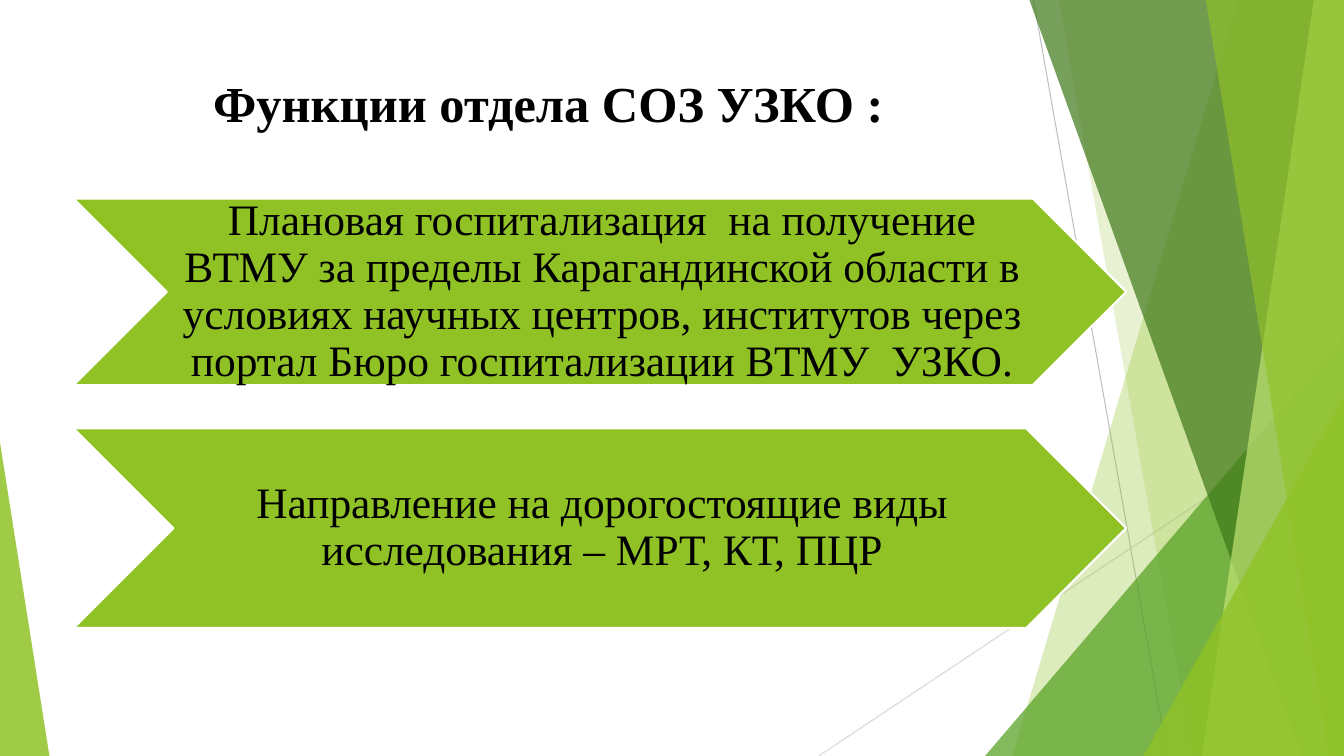
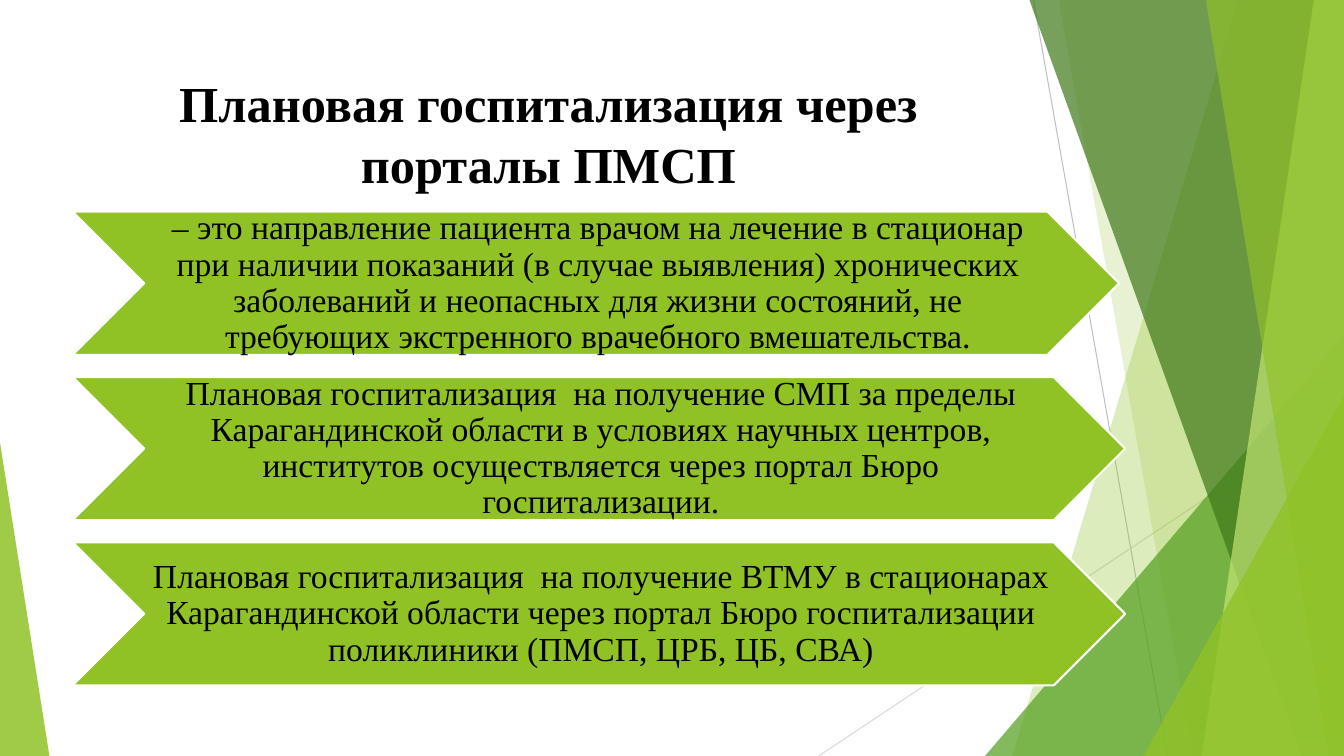
"""Build two slides on planned hospitalisation with a shared faceted green backdrop."""
import pptx
import pptx.dml.color
import pptx.enum.shapes
import pptx.enum.text
import pptx.oxml
import pptx.oxml.ns
import pptx.util

Inches = pptx.util.Inches
Pt = pptx.util.Pt
qn = pptx.oxml.ns.qn
SHAPE = pptx.enum.shapes.MSO_SHAPE
ANCHOR = pptx.enum.text.MSO_ANCHOR
CENTER = pptx.enum.text.PP_ALIGN.CENTER

WIDTH, HEIGHT = 13.33, 7.5
FONT = "Times New Roman"
COLORS = {
    "text": "000000",
    "outline": "FFFFFF",
    "lime": "90C226",
    "green": "54A021",
    "forest": "3F7819",
    "pale": "C0E474",
    "steep line": "BFBFBF",
    "flat line": "D9D9D9",
}

SLIDES = [
    {
        "title": "Функции отдела СОЗ УЗКО :",
        "size": 31,
        "left": 0.73,
        "arrows": [
            (1.97, 10.44, 1.85,
             "Плановая госпитализация  на получение ВТМУ за пределы Карагандинской области "
             "в условиях научных центров, институтов через портал Бюро госпитализации "
             "ВТМУ  УЗКО."),
            (4.25, 10.44, 1.98,
             "Направление на дорогостоящие виды исследования – МРТ, КТ, ПЦР"),
        ],
    },
    {
        "title": "Плановая госпитализация через порталы ПМСП",
        "size": 24,
        "left": 0.72,
        "arrows": [
            (2.1, 10.38, 1.42,
             "– это направление пациента врачом на лечение в стационар при наличии показаний "
             "(в случае выявления) хронических заболеваний и неопасных для жизни состояний, "
             "не требующих экстренного врачебного вмешательства."),
            (3.74, 10.44, 1.42,
             "Плановая госпитализация  на получение СМП за пределы Карагандинской области "
             "в условиях научных центров, институтов осуществляется через портал "
             "Бюро госпитализации."),
            (5.38, 10.44, 1.42,
             "Плановая госпитализация  на получение ВТМУ в стационарах Карагандинской области "
             "через портал Бюро госпитализации поликлиники (ПМСП, ЦРБ, ЦБ, СВА)"),
        ],
    },
]


def rgb(name):
    """Return the palette colour with the given name."""
    return pptx.dml.color.RGBColor.from_string(COLORS[name])


def tint(shape, color, opacity):
    """Give a shape a borderless fill of the given opacity in percent."""
    shape.shadow.inherit = False
    shape.line.fill.background()
    shape.fill.solid()
    shape.fill.fore_color.rgb = rgb(color)
    fill_color = next(shape.element.iter(qn("a:srgbClr")))
    alpha = pptx.oxml.parse_xml(
        f'<a:alpha {pptx.oxml.ns.nsdecls("a")} val="{opacity * 1000}"/>')
    fill_color.append(alpha)


def add_line(shapes, start, end, color):
    """Add a thin straight line."""
    points = [Inches(value) for value in (*start, *end)]
    line = shapes.add_connector(pptx.enum.shapes.MSO_CONNECTOR.STRAIGHT, *points)
    line.line.color.rgb = rgb(color)
    line.line.width = Pt(0.75)
    line.element.spPr.append(line.element.makeelement(qn("a:effectLst"), {}))


def add_facet(shapes, top_x, bottom_x, color, opacity):
    """Add a full-height facet between a slanted edge and the right slide edge."""
    builder = shapes.build_freeform(Inches(top_x), 0)
    corners = [(WIDTH, 0), (WIDTH, HEIGHT), (bottom_x, HEIGHT)]
    builder.add_line_segments([(Inches(x), Inches(y)) for x, y in corners])
    tint(builder.convert_to_shape(), color, opacity)


def add_corner(shapes, left, top, width, apex, color, opacity):
    """Add a right triangle that stands on the bottom slide edge."""
    triangle = shapes.add_shape(
        SHAPE.ISOSCELES_TRIANGLE,
        Inches(left), Inches(top), Inches(width), Inches(HEIGHT - top))
    triangle.adjustments[0] = apex
    tint(triangle, color, opacity)


def add_backdrop(slide):
    """Draw the backdrop and place it behind the placeholders of the layout."""
    backdrop = slide.shapes.add_group_shape()
    shapes = backdrop.shapes
    add_line(shapes, (10.25, 0), (11.58, HEIGHT), "steep line")
    add_line(shapes, (WIDTH, 4.03), (8.12, HEIGHT), "flat line")
    add_facet(shapes, 12.28, 10.04, "lime", 30)
    add_facet(shapes, 10.5, 11.83, "lime", 20)
    add_corner(shapes, 9.77, 3.33, 3.56, 1, "green", 72)
    add_facet(shapes, 10.21, 12.91, "forest", 70)
    add_facet(shapes, 13.03, 11.92, "pale", 70)
    add_facet(shapes, 11.96, 13.18, "lime", 65)
    add_corner(shapes, 11.34, 3.93, 1.99, 1, "lime", 80)
    add_corner(shapes, 0, 4.39, 0.49, 0, "lime", 85)
    for number, properties in enumerate(backdrop.element.iter(qn("p:cNvPr")), 100):
        properties.set("id", str(number))
    slide.slide_layout.shapes.element.insert(2, backdrop.element)


def place_title(layout):
    """Set the position of the title that the slides inherit."""
    title = layout.placeholders[0]
    title.left, title.top = Inches(0.74), Inches(0.67)
    title.width, title.height = Inches(9.4), Inches(1.44)


def write(shape, text, size, anchor, bold=False):
    """Write one centred paragraph into a shape."""
    frame = shape.text_frame
    frame.text = text
    frame.word_wrap = True
    frame.auto_size = pptx.enum.text.MSO_AUTO_SIZE.NONE
    frame.vertical_anchor = anchor
    paragraph = frame.paragraphs[0]
    paragraph.alignment = CENTER
    font = paragraph.runs[0].font
    font.name, font.size, font.bold = FONT, Pt(size), bold
    font.color.rgb = rgb("text")


def add_arrow(slide, left, top, width, height, text, size):
    """Add a chevron that holds its own text."""
    arrow = slide.shapes.add_shape(
        SHAPE.CHEVRON, Inches(left), Inches(top), Inches(width), Inches(height))
    arrow.shadow.inherit = False
    arrow.fill.solid()
    arrow.fill.fore_color.rgb = rgb("lime")
    arrow.line.color.rgb = rgb("outline")
    arrow.line.width = Pt(1.5)
    write(arrow, text, size, ANCHOR.MIDDLE)
    frame = arrow.text_frame
    frame.margin_left, frame.margin_right = Inches(0.04), 0
    frame.margin_top = frame.margin_bottom = Inches(0.02)
    frame.paragraphs[0].line_spacing = 0.9


def add_slide(presentation, layout, content):
    """Add a slide with a title and a column of chevrons."""
    slide = presentation.slides.add_slide(layout)
    write(slide.shapes.title, content["title"], 36, ANCHOR.TOP, bold=True)
    for top, width, height, text in content["arrows"]:
        add_arrow(slide, content["left"], top, width, height, text, content["size"])
    return slide


def main():
    """Build and save the presentation."""
    presentation = pptx.Presentation()
    presentation.slide_width = Inches(WIDTH)
    presentation.slide_height = Inches(HEIGHT)
    layout = presentation.slide_layouts.get_by_name("Title Only")
    place_title(layout)
    slides = [add_slide(presentation, layout, content) for content in SLIDES]
    add_backdrop(slides[0])
    presentation.save("out.pptx")


if __name__ == "__main__":
    main()
